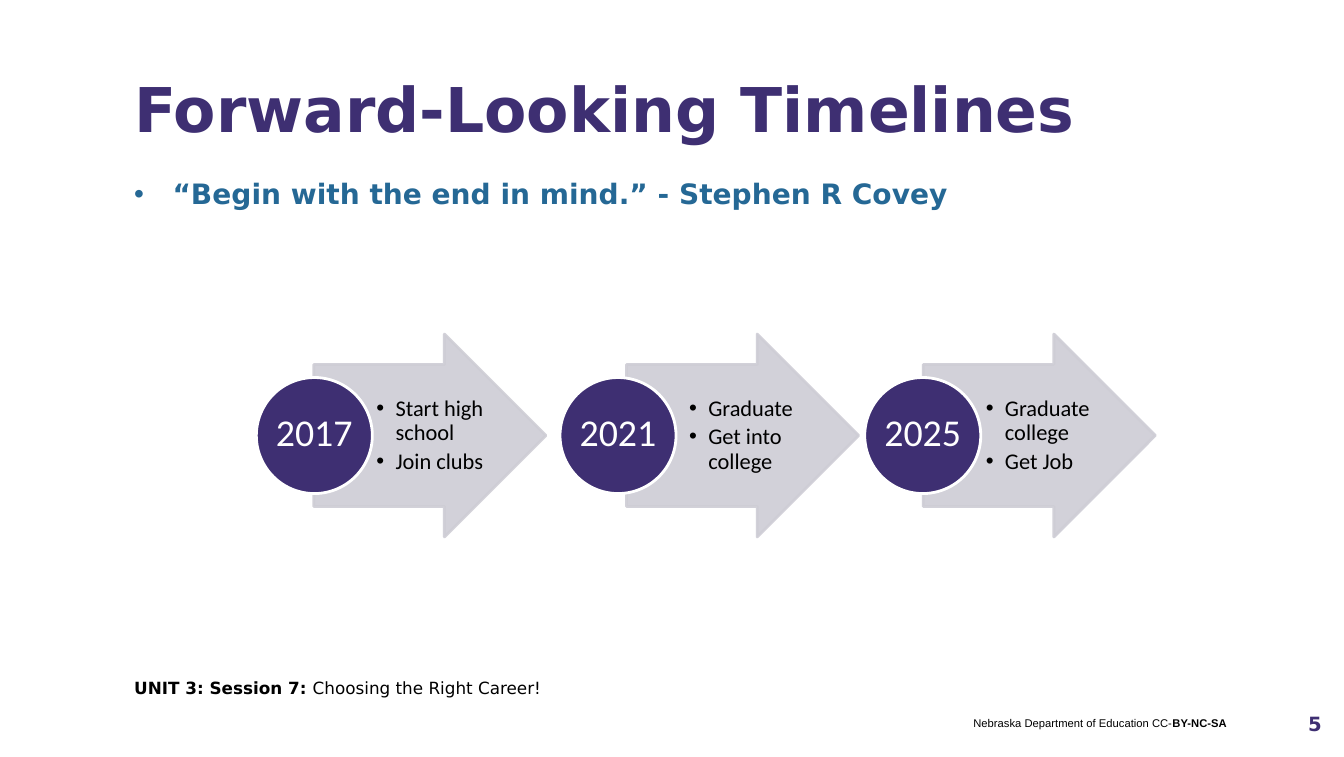
from dataclasses import dataclass

from lxml import etree
from pptx import Presentation
from pptx import util as u
from pptx.dml.color import RGBColor
from pptx.enum import shapes, text
from pptx.oxml.ns import qn


@dataclass(frozen=True)
class Theme:
    """Colours, fonts and type sizes of the slide."""
    purple: str = "3E2F72"
    blue: str = "256895"
    arrow: str = "CECDD5"
    black: str = "000000"
    white: str = "FFFFFF"
    heading_font: str = "DejaVu Sans"
    diagram_font: str = "Calibri"
    credit_font: str = "Arial"
    title_size: int = 44
    year_size: int = 27
    quote_size: int = 20
    goal_size: int = 16
    number_size: int = 14
    session_size: int = 12
    credit_size: int = 8


THEME = Theme()
LEFT, CENTER, RIGHT = text.PP_ALIGN.LEFT, text.PP_ALIGN.CENTER, text.PP_ALIGN.RIGHT
TOP, MIDDLE = text.MSO_ANCHOR.TOP, text.MSO_ANCHOR.MIDDLE

MILESTONES = [
    ("2017", 2.54, 3.11, ["Start high school", "Join clubs"]),
    ("2021", 5.55, 6.21, ["Graduate", "Get into college"]),
    ("2025", 8.57, 9.15, ["Graduate college", "Get Job"]),
]


def inches(box):
    """Turn a box of numbers into lengths."""
    return [u.Inches(value) for value in box]


def add_bullet(paragraph, indent):
    """Give a paragraph a round bullet with a hanging indent."""
    properties = paragraph._p.get_or_add_pPr()
    properties.set("marL", str(u.Inches(indent)))
    properties.set("indent", str(-u.Inches(indent)))
    etree.SubElement(properties, qn("a:buFont"), typeface="Arial")
    etree.SubElement(properties, qn("a:buChar"), char="•")


def add_text(slide, box, paragraphs, size, font, color, align=LEFT, anchor=TOP,
             margins=(0, 0, 0, 0), bullet=None, line_spacing=None, gap=0):
    """Add a text box; each paragraph is a list of (wording, bold) runs."""
    frame = slide.shapes.add_textbox(*inches(box)).text_frame
    frame.word_wrap = True
    frame.vertical_anchor = anchor
    (frame.margin_left, frame.margin_top,
     frame.margin_right, frame.margin_bottom) = inches(margins)
    for index, runs in enumerate(paragraphs):
        paragraph = frame.add_paragraph() if index else frame.paragraphs[0]
        if bullet:
            add_bullet(paragraph, bullet)
        paragraph.alignment = align
        if line_spacing:
            paragraph.line_spacing = line_spacing
        if index:
            paragraph.space_before = u.Pt(gap)
        for wording, bold in runs:
            run = paragraph.add_run()
            run.text = wording
            run.font.size = u.Pt(size)
            run.font.name = font
            run.font.bold = bold
            run.font.color.rgb = RGBColor.from_string(color)


def add_figure(slide, kind, box, fill, line, alpha=None):
    """Add a filled, outlined preset shape, optionally see-through."""
    shape = slide.shapes.add_shape(kind, *inches(box))
    shape.shadow.inherit = False
    shape.fill.solid()
    shape.fill.fore_color.rgb = RGBColor.from_string(fill)
    shape.line.color.rgb = RGBColor.from_string(line)
    shape.line.width = u.Pt(2)
    if alpha:
        for color in shape._element.spPr.iter(qn("a:srgbClr")):
            etree.SubElement(color, qn("a:alpha"), val=str(alpha * 1000))
    return shape


def add_header(slide, left, top, width):
    """Add the title and the quotation below it."""
    add_text(slide, (left, top, width, 1.03), [[("Forward-Looking Timelines", True)]],
             THEME.title_size, THEME.heading_font, THEME.purple)
    add_text(slide, (left, top + 1.05, width - 0.4, 0.5),
             [[("“Begin with the end in mind.” - Stephen R Covey", True)]],
             THEME.quote_size, THEME.heading_font, THEME.blue, bullet=0.38)


def add_milestone(slide, top, year, circle_left, arrow_left, goals):
    """Add one arrow with its goals and the year circle at its tail."""
    arrow = add_figure(slide, shapes.MSO_SHAPE.RIGHT_ARROW, (arrow_left, top, 2.3, 2.01),
                       THEME.arrow, THEME.arrow, alpha=90)
    arrow.adjustments[0], arrow.adjustments[1] = 0.7, 0.5
    add_text(slide, (arrow_left + 0.58, top + 0.3, 1.12, 1.41),
             [[(goal, False)] for goal in goals],
             THEME.goal_size, THEME.diagram_font, THEME.black, anchor=MIDDLE,
             margins=(0.04, 0.01, 0.02, 0.01), bullet=0.19, line_spacing=0.9, gap=3)
    add_figure(slide, shapes.MSO_SHAPE.OVAL, (circle_left, top + 0.43, 1.15, 1.15),
               THEME.purple, THEME.white)
    add_text(slide, (circle_left + 0.17, top + 0.59, 0.81, 0.81), [[(year, False)]],
             THEME.year_size, THEME.diagram_font, THEME.white, CENTER, MIDDLE,
             margins=(0.02,) * 4, line_spacing=0.9)


def add_footer(slide, left, top):
    """Add the session name, the credit and the slide number."""
    add_text(slide, (left, top, 4.7, 0.43),
             [[("UNIT 3: Session 7: ", True), ("Choosing the Right Career!", False)]],
             THEME.session_size, THEME.heading_font, THEME.black)
    add_text(slide, (left + 7.07, top + 0.39, 3.76, 0.25),
             [[("Nebraska Department of Education CC-", False), ("BY-NC-SA", True)]],
             THEME.credit_size, THEME.credit_font, THEME.black, RIGHT)
    add_text(slide, (left + 11.32, top + 0.27, 0.45, 0.37), [[("5", True)]],
             THEME.number_size, THEME.heading_font, THEME.purple, RIGHT, MIDDLE)


def main():
    """Build and save the slide."""
    presentation = Presentation()
    presentation.slide_width = u.Inches(13.32)
    presentation.slide_height = u.Inches(7.5)
    slide = presentation.slides.add_slide(presentation.slide_layouts[6])
    add_header(slide, 1.33, 0.7, 11.32)
    for milestone in MILESTONES:
        add_milestone(slide, 3.31, *milestone)
    add_footer(slide, 1.33, 6.71)
    presentation.save("out.pptx")


if __name__ == "__main__":
    main()
